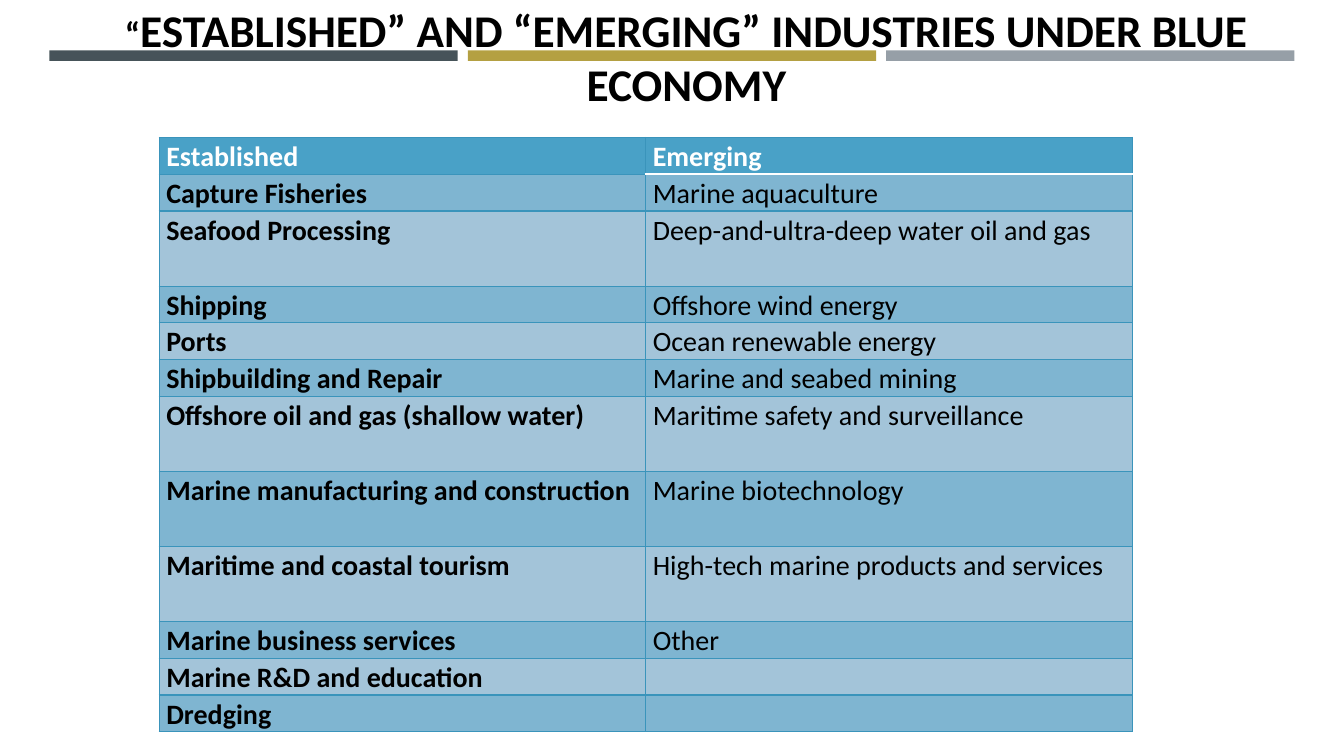
"""Build the slide on established and emerging industries of the blue economy."""
from dataclasses import dataclass

from pptx import Presentation
from pptx.dml.color import RGBColor
from pptx.enum.shapes import MSO_SHAPE as Preset
from pptx.enum.text import MSO_ANCHOR as Anchor, PP_ALIGN as Align
from pptx.oxml import parse_xml
from pptx.oxml.ns import nsdecls
from pptx.util import Inches, Pt

SLIDE_WIDTH, SLIDE_HEIGHT = Inches(13.33), Inches(7.5)


@dataclass(frozen=True)
class Theme:
    """Colours, font and type sizes of the slide."""
    font: str = "Calibri"
    ink: str = "000000"
    paper: str = "FFFFFF"
    slate: str = "465359"
    gold: str = "B4A042"
    grey: str = "969FA7"
    header: str = "49A1C7"
    dark_band: str = "7FB5D1"
    light_band: str = "A3C4D9"
    rule: str = "3A94BB"
    quote_size: float = 25.2
    title_size: float = 32.4
    table_size: float = 20


@dataclass(frozen=True)
class Area:
    """Rectangle in percent of the slide's width and height."""
    left: float
    top: float
    width: float
    height: float

    def emu(self) -> tuple[int, int, int, int]:
        """Return the rectangle in slide units."""
        return across(self.left), down(self.top), across(self.width), down(self.height)


@dataclass(frozen=True)
class Industry:
    """One table row, tall where it leaves room for a second line."""
    established: str
    emerging: str = ""
    tall: bool = False

    @property
    def height(self) -> float:
        """Return the row height in percent of the slide's height."""
        return 9.94 if self.tall else 4.84


THEME = Theme()
BAR = Area(3.68, 6.67, 30.38, 1.38)
BAR_PITCH = 31.13
TITLE = Area(6, -3.47, 90.15, 29.6)
TITLE_DROP = 11.47
TABLE = Area(11.85, 18.2, 72.4, 78.5)

INDUSTRIES = [
    Industry("Established", "Emerging"),
    Industry("Capture Fisheries", "Marine aquaculture"),
    Industry("Seafood Processing", "Deep-and-ultra-deep water oil and gas", True),
    Industry("Shipping", "Offshore wind energy"),
    Industry("Ports", "Ocean renewable energy"),
    Industry("Shipbuilding and Repair", "Marine and seabed mining"),
    Industry("Offshore oil and gas (shallow water)", "Maritime safety and surveillance", True),
    Industry("Marine manufacturing and construction", "Marine biotechnology", True),
    Industry("Maritime and coastal tourism", "High-tech marine products and services", True),
    Industry("Marine business services", "Other"),
    Industry("Marine R&D and education"),
    Industry("Dredging"),
]


def across(percent: float) -> int:
    """Convert a share of the slide's width."""
    return round(SLIDE_WIDTH * percent / 100)


def down(percent: float) -> int:
    """Convert a share of the slide's height."""
    return round(SLIDE_HEIGHT * percent / 100)


def add_run(paragraph, words: str, size: float, colour: str, bold: bool = True) -> None:
    """Append one formatted run."""
    run = paragraph.add_run()
    run.text = words
    run.font.name, run.font.size, run.font.bold = THEME.font, Pt(size), bold
    run.font.color.rgb = RGBColor.from_string(colour)


def draw_bars(slide) -> None:
    """Draw the three coloured bars at the top."""
    for place, colour in enumerate((THEME.slate, THEME.gold, THEME.grey)):
        area = Area(BAR.left + place * BAR_PITCH, BAR.top, BAR.width, BAR.height)
        bar = slide.shapes.add_shape(Preset.RECTANGLE, *area.emu())
        bar.shadow.inherit = False
        bar.fill.solid()
        bar.fill.fore_color.rgb = RGBColor.from_string(colour)
        bar.line.fill.background()


def draw_title(slide) -> None:
    """Fill the title and bring it in front of the bars."""
    title = slide.shapes.title
    title.left, title.top, title.width, title.height = TITLE.emu()
    frame = title.text_frame
    frame.word_wrap = True
    frame.vertical_anchor = Anchor.BOTTOM
    frame.margin_bottom = down(TITLE_DROP)
    heading = frame.paragraphs[0]
    heading.alignment = Align.CENTER
    heading.line_spacing = 1.0
    add_run(heading, "“", THEME.quote_size, THEME.ink)
    add_run(heading, "ESTABLISHED” AND “EMERGING” INDUSTRIES UNDER BLUE ECONOMY",
            THEME.title_size, THEME.ink)
    slide.shapes._spTree.append(title._element)


def add_border(cell, side: str, colour: str, points: float) -> None:
    """Add one border line to a cell."""
    cell._tc.get_or_add_tcPr().append(parse_xml(
        f'<a:ln{side} {nsdecls("a")} w="{Pt(points)}"><a:solidFill>'
        f'<a:srgbClr val="{colour}"/></a:solidFill></a:ln{side}>'))


def fill_cell(cell, words: str, row: int, column: int) -> None:
    """Format one cell by its place in the table."""
    white_edge = {(0, 1): "B", (1, 1): "T"}.get((row, column))
    for side in "LRTB":
        if side == white_edge:
            add_border(cell, side, THEME.paper, 1.75)
        else:
            add_border(cell, side, THEME.rule, 1)
    band = THEME.dark_band if row % 2 else THEME.light_band
    cell.fill.solid()
    cell.fill.fore_color.rgb = RGBColor.from_string(band if row else THEME.header)
    cell.margin_left = cell.margin_right = Inches(0.07)
    cell.margin_top = cell.margin_bottom = 0
    if words:
        entry = cell.text_frame.paragraphs[0]
        entry.line_spacing = 1.07
        add_run(entry, words, THEME.table_size, THEME.ink if row else THEME.paper,
                bold=row == 0 or column == 0)


def draw_table(slide) -> None:
    """Draw the two-column table of industries."""
    table = slide.shapes.add_table(len(INDUSTRIES), 2, *TABLE.emu()).table
    for row, industry in enumerate(INDUSTRIES):
        table.rows[row].height = down(industry.height)
        for column, words in enumerate((industry.established, industry.emerging)):
            fill_cell(table.cell(row, column), words, row, column)


def main() -> None:
    """Build and save the presentation."""
    deck = Presentation()
    deck.slide_width, deck.slide_height = SLIDE_WIDTH, SLIDE_HEIGHT
    slide = deck.slides.add_slide(deck.slide_layouts[5])
    draw_bars(slide)
    draw_title(slide)
    draw_table(slide)
    deck.save("out.pptx")


if __name__ == "__main__":
    main()
